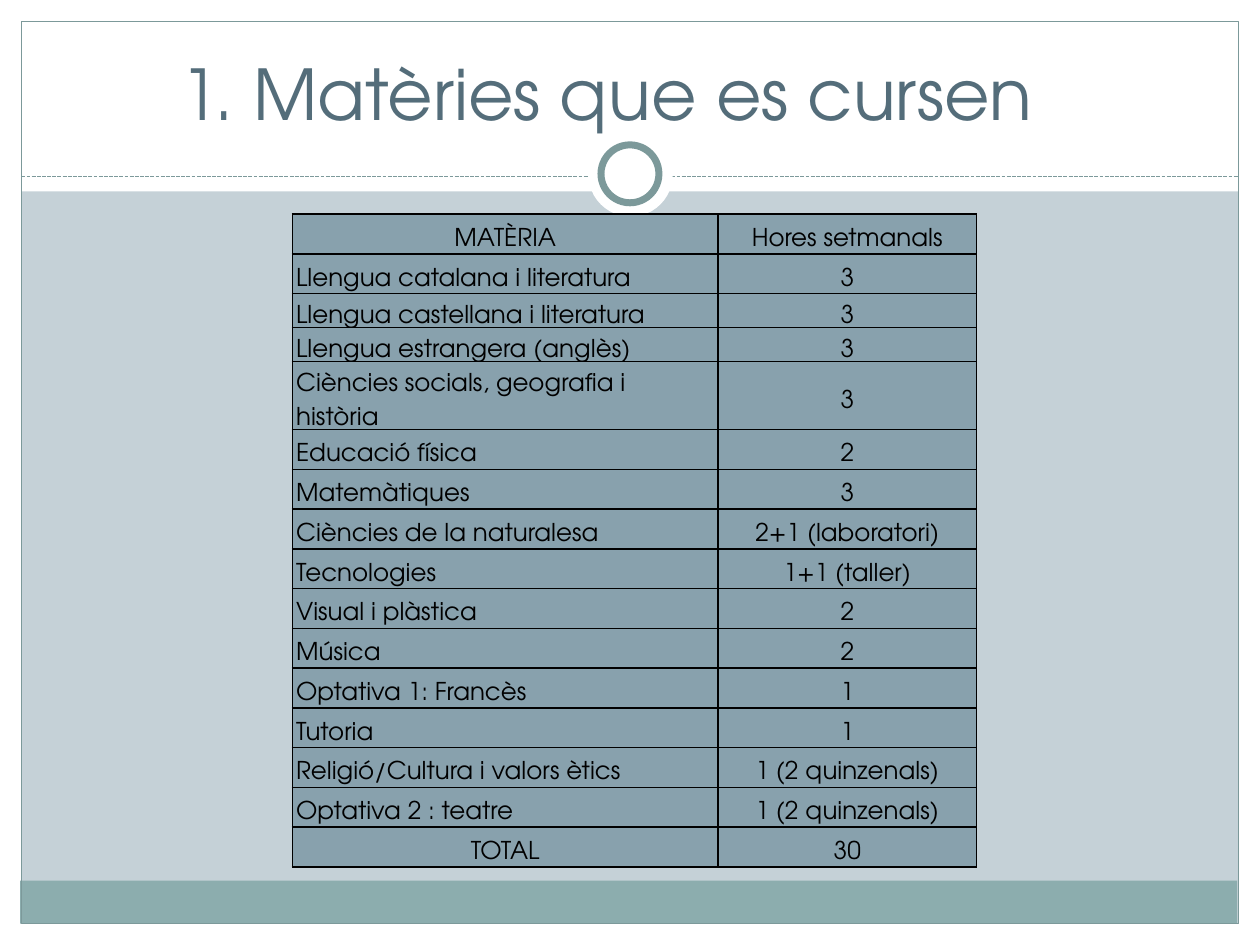
from dataclasses import dataclass
from typing import Any, Optional

from pptx import Presentation
from pptx import util as u
from pptx.dml.color import RGBColor
from pptx.enum import dml, shapes, text
from pptx.oxml import parse_xml
from pptx.oxml.ns import nsdecls

WHITE = RGBColor(0xFF, 0xFF, 0xFF)
BLACK = RGBColor(0x00, 0x00, 0x00)
BACKDROP = RGBColor(0xC5, 0xD1, 0xD7)
TEAL = RGBColor(0x8C, 0xAD, 0xAE)
OUTLINE = RGBColor(0x7C, 0x99, 0x9A)
TITLE_COLOR = RGBColor(0x54, 0x6D, 0x7A)
CELL_COLOR = RGBColor(0x88, 0xA1, 0xAD)
FONT = "TeX Gyre Adventor"
CENTER = text.PP_ALIGN.CENTER
RECTANGLE = shapes.MSO_SHAPE.RECTANGLE
OVAL = shapes.MSO_SHAPE.OVAL


@dataclass
class Panel:
    left: float
    top: float
    width: float
    height: float
    fill: Optional[RGBColor] = WHITE
    kind: shapes.MSO_SHAPE = RECTANGLE
    line_width: float = 0


@dataclass
class Subject:
    name: str
    hours: str
    height: float = 4.1 / 13
    centered: bool = False


PANELS = [
    Panel(0, 7.33, 10, 0.17),
    Panel(0, 0, 10, 1.52),
    Panel(0, 0, 0.17, 7.5),
    Panel(9.83, 0, 0.17, 7.5),
    Panel(0.16, 6.99, 9.66, 0.34, TEAL),
    Panel(0.17, 0.17, 9.66, 7.16, None, line_width=0.75),
]
RING = [
    Panel(4.67, 1.05, 0.67, 0.67, kind=OVAL),
    Panel(4.77, 1.15, 0.46, 0.46, kind=OVAL, line_width=4),
]
SUBJECTS = [
    Subject("MATÈRIA", "Hores setmanals", centered=True),
    Subject("Llengua catalana i literatura", "3"),
    Subject("Llengua castellana i literatura", "3", 0.24),
    Subject("Llengua estrangera (anglès)", "3", 0.05),
    Subject("Ciències socials, geografia i història", "3"),
    Subject("Educació física", "2"),
    Subject("Matemàtiques", "3"),
    Subject("Ciències de la naturalesa", "2+1 (laboratori)"),
    Subject("Tecnologies", "1+1 (taller)"),
    Subject("Visual i plàstica", "2"),
    Subject("Música", "2"),
    Subject("Optativa 1: Francès", "1"),
    Subject("Tutoria", "1"),
    Subject("Religió/Cultura i valors ètics", "1 (2 quinzenals)"),
    Subject("Optativa 2 : teatre", "1 (2 quinzenals)"),
    Subject("TOTAL", "30", centered=True),
]
COLUMN_WIDTHS = [3.38, 2.05]


def apply_format(target: Any, values: dict[str, Any]) -> None:
    for name, value in values.items():
        setattr(target, name, value)


def format_span(span: Any, size: float, color: RGBColor) -> None:
    apply_format(span.font, {"name": FONT, "size": u.Pt(size)})
    span.font.color.rgb = color


def draw_panel(page: Any, panel: Panel) -> None:
    frame = (panel.left, panel.top, panel.width, panel.height)
    shape = page.shapes.add_shape(panel.kind, *map(u.Inches, frame))
    shape.shadow.inherit = False
    if panel.fill is None:
        shape.fill.background()
    else:
        shape.fill.solid()
        shape.fill.fore_color.rgb = panel.fill
    if panel.line_width:
        shape.line.color.rgb = OUTLINE
        shape.line.width = u.Pt(panel.line_width)
    else:
        shape.line.fill.background()


def draw_divider(page: Any) -> None:
    ends = map(u.Inches, (0.17, 1.4, 9.83, 1.4))
    divider = page.shapes.add_connector(shapes.MSO_CONNECTOR.STRAIGHT, *ends)
    divider.line.color.rgb = OUTLINE
    apply_format(divider.line, {
        "width": u.Pt(0.75),
        "dash_style": dml.MSO_LINE.SQUARE_DOT,
    })
    properties = divider.line._get_or_add_ln().getparent()
    properties.append(parse_xml(f"<a:effectLst {nsdecls('a')}/>"))


def draw_title(page: Any, wording: str) -> None:
    title = page.shapes.title
    apply_format(title, {
        "left": u.Inches(0.35),
        "top": u.Inches(0.29),
        "width": u.Inches(8.93),
        "height": u.Inches(0.83),
    })
    title.text_frame.vertical_anchor = text.MSO_ANCHOR.BOTTOM
    para = title.text_frame.paragraphs[0]
    para.alignment = CENTER
    span = para.add_run()
    span.text = wording
    format_span(span, 40, TITLE_COLOR)
    title.element.getparent().append(title.element)


def add_borders(cell: Any) -> None:
    properties = cell._tc.get_or_add_tcPr()
    for position, side in enumerate("LRTB"):
        properties.insert(position, parse_xml(
            f'<a:ln{side} {nsdecls("a")} w="{u.Pt(1)}"><a:solidFill>'
            f'<a:srgbClr val="{BLACK}"/></a:solidFill></a:ln{side}>'
        ))


def fill_cell(cell: Any, wording: str, centered: bool) -> None:
    apply_format(cell, {
        "margin_left": u.Inches(0.03),
        "margin_right": u.Inches(0.03),
        "margin_top": 0,
        "margin_bottom": 0,
        "vertical_anchor": text.MSO_ANCHOR.MIDDLE,
    })
    cell.fill.solid()
    cell.fill.fore_color.rgb = CELL_COLOR
    add_borders(cell)
    para = cell.text_frame.paragraphs[0]
    apply_format(para, {
        "alignment": CENTER if centered else text.PP_ALIGN.LEFT,
        "line_spacing": 1.5,
    })
    span = para.add_run()
    span.text = wording
    format_span(span, 14, BLACK)


def draw_timetable(page: Any) -> None:
    height = sum(subject.height for subject in SUBJECTS)
    frame = (2.32, 1.7, sum(COLUMN_WIDTHS), height)
    table = page.shapes.add_table(
        len(SUBJECTS), len(COLUMN_WIDTHS), *map(u.Inches, frame)
    ).table
    apply_format(table, {"first_row": False, "horz_banding": False})
    for column, width in zip(table.columns, COLUMN_WIDTHS):
        column.width = u.Inches(width)
    for row, subject in zip(table.rows, SUBJECTS):
        row.height = u.Inches(subject.height)
        fill_cell(row.cells[0], subject.name, subject.centered)
        fill_cell(row.cells[1], subject.hours, True)


def main() -> None:
    deck = Presentation()
    apply_format(deck, {
        "slide_width": u.Inches(10),
        "slide_height": u.Inches(7.5),
    })
    page = deck.slides.add_slide(deck.slide_layouts.get_by_name("Title Only"))
    page.background.fill.solid()
    page.background.fill.fore_color.rgb = BACKDROP
    for panel in PANELS:
        draw_panel(page, panel)
    draw_divider(page)
    for panel in RING:
        draw_panel(page, panel)
    draw_title(page, "1. Matèries que es cursen")
    draw_timetable(page)
    deck.save("out.pptx")


if __name__ == "__main__":
    main()
